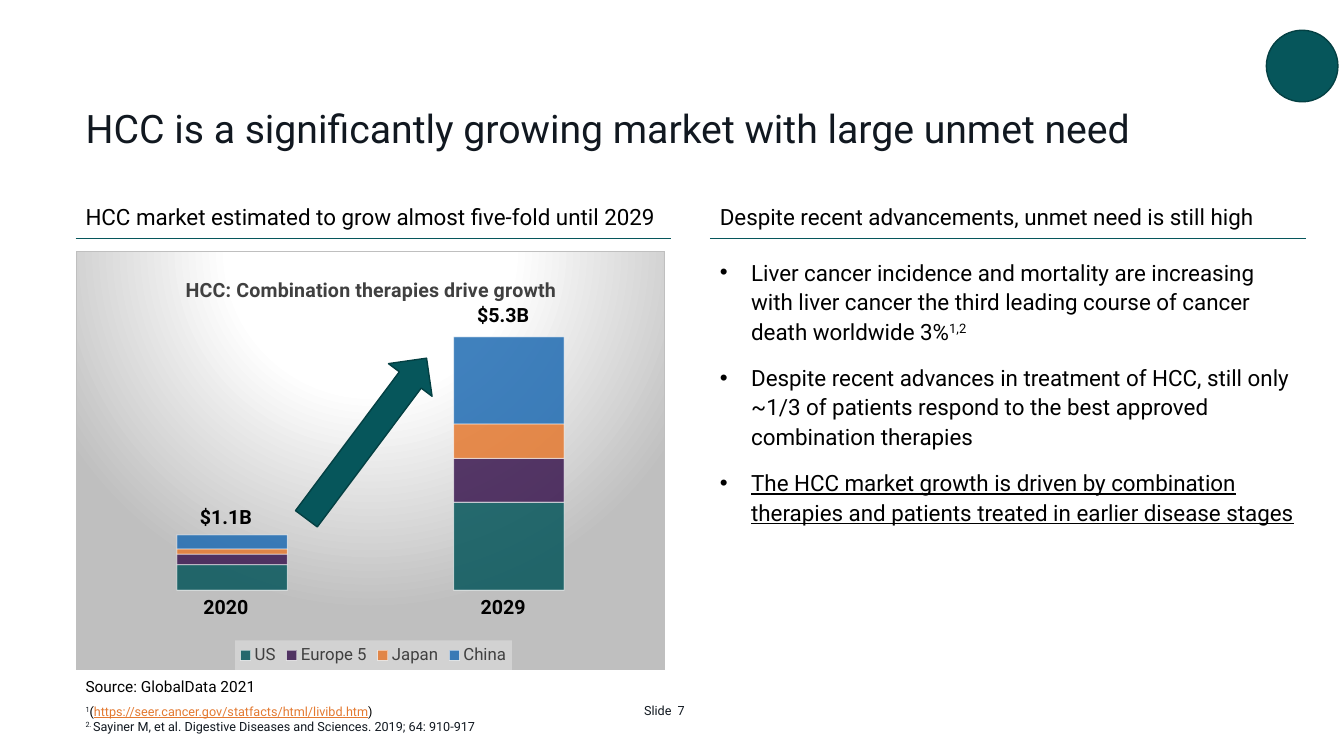
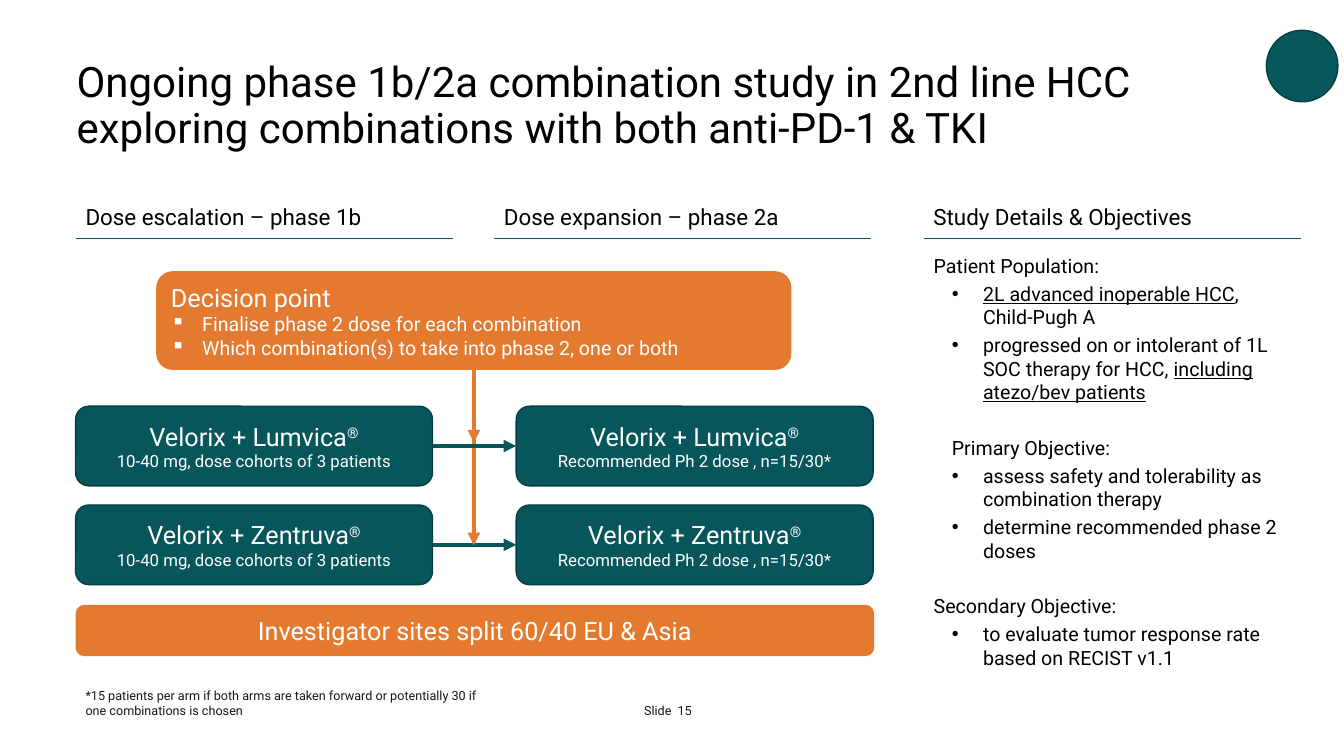
from dataclasses import dataclass
from typing import Optional

from lxml.etree import SubElement
from pptx import Presentation
from pptx.chart.data import CategoryChartData
from pptx.dml.color import RGBColor
from pptx.enum.chart import XL_CHART_TYPE, XL_LEGEND_POSITION
from pptx.enum.shapes import MSO_CONNECTOR, MSO_SHAPE
from pptx.enum.text import MSO_ANCHOR, MSO_AUTO_SIZE, PP_ALIGN
from pptx.oxml import parse_xml
from pptx.oxml.ns import nsdecls, qn
from pptx.util import Inches, Pt

FONT = "Roboto"
TEAL, TEAL_EDGE, ORANGE = "06565B", "044043", "E47930"
PURPLE, BLUE = "3B1850", "1F6BB2"
INK, BLACK, WHITE, GREY, SILVER = "111820", "000000", "FFFFFF", "404040", "BFBFBF"
SUPER = {"super": True}
UNDER = {"underline": True}
RULE_TOP = 2.36


@dataclass
class Para:
    runs: list
    bullet: Optional[str] = None
    margin: float = 0
    hanging: float = 0
    before: float = 0
    after: float = 0
    spacing: float = 1.0
    align: PP_ALIGN = PP_ALIGN.LEFT


def rgb(value):
    return RGBColor.from_string(value)


def style_font(font, size, color, bold=False):
    font.name, font.size, font.bold = FONT, Pt(size), bold
    font.color.rgb = rgb(color)


def add_run(paragraph, text, size, color, super=False, underline=False, bold=False):
    run = paragraph.add_run()
    run.text = text
    style_font(run.font, size, color, bold)
    if underline:
        run.font.underline = True
    if super:
        run._r.get_or_add_rPr().set("baseline", "30000")


def write(frame, paras, size, color, anchor=MSO_ANCHOR.TOP):
    frame.word_wrap = True
    frame.auto_size = MSO_AUTO_SIZE.NONE
    frame.vertical_anchor = anchor
    for index, para in enumerate(paras):
        paragraph = frame.paragraphs[0] if index == 0 else frame.add_paragraph()
        properties = paragraph._p.get_or_add_pPr()
        properties.set("marL", str(Inches(para.margin)))
        properties.set("indent", str(Inches(-para.hanging)))
        if para.bullet:
            SubElement(properties, qn("a:buChar")).set("char", para.bullet)
        else:
            SubElement(properties, qn("a:buNone"))
        paragraph.alignment = para.align
        paragraph.line_spacing = para.spacing
        paragraph.space_before = Pt(para.before)
        paragraph.space_after = Pt(para.after)
        for item in para.runs:
            text, options = (item, {}) if isinstance(item, str) else item
            add_run(paragraph, text, **{"size": size, "color": color, **options})


def place(shape, left, top, width, height):
    shape.left, shape.top = Inches(left), Inches(top)
    shape.width, shape.height = Inches(width), Inches(height)


def add_text(slide, box, paras, size, color=BLACK, anchor=MSO_ANCHOR.TOP):
    frame = slide.shapes.add_textbox(*map(Inches, box)).text_frame
    write(frame, paras, size, color, anchor)
    return frame


def add_block(slide, kind, box, fill, edge=None):
    block = slide.shapes.add_shape(kind, *map(Inches, box))
    block.shadow.inherit = False
    block.fill.solid()
    block.fill.fore_color.rgb = rgb(fill)
    if edge:
        block.line.color.rgb = rgb(edge)
        block.line.width = Pt(1)
    else:
        block.line.fill.background()
    return block


def add_line(slide, start, end, color, width, arrow=False):
    line = slide.shapes.add_connector(
        MSO_CONNECTOR.STRAIGHT, *map(Inches, (*start, *end)))
    line.line.color.rgb = rgb(color)
    line.line.width = Pt(width)
    if arrow:
        SubElement(line.line._get_or_add_ln(), qn("a:tailEnd")).set("type", "triangle")
    SubElement(line._element.spPr, qn("a:effectLst"))
    return line


def add_heading(slide, text, left, width):
    add_text(slide, (left, 1.97, width, 0.36), [Para([text])], 16,
             anchor=MSO_ANCHOR.MIDDLE)
    add_line(slide, (left, RULE_TOP), (left + width, RULE_TOP), TEAL, 0.5)


def add_footnote(slide, paras, width, height):
    add_text(slide, (0.75, 6.77, width, height), paras, 9, INK, MSO_ANCHOR.BOTTOM)


def start_slide(deck, title, number, title_left, size, color):
    slide = deck.slides.add_slide(deck.slide_layouts[1])
    place(slide.shapes.title, title_left, 0.55, 11.64, 1.01)
    write(slide.shapes.title.text_frame, [Para([title], spacing=0.9)], size, color,
          MSO_ANCHOR.BOTTOM)
    add_block(slide, MSO_SHAPE.OVAL, (12.56, 0.3, 0.71, 0.71), TEAL, TEAL_EDGE)
    word = add_text(slide, (5.67, 6.77, 1.01, 0.4),
                    [Para(["Slide"], align=PP_ALIGN.RIGHT)], 9, INK, MSO_ANCHOR.BOTTOM)
    word.margin_right = Inches(0.02)
    page = add_text(slide, (6.7, 6.77, 0.62, 0.4), [Para([number])], 9, INK,
                    MSO_ANCHOR.BOTTOM)
    page.margin_left = Inches(0.02)
    return slide


def fill_body(slide, box, paras, size):
    body = slide.placeholders[1]
    place(body, *box)
    write(body.text_frame, paras, size, BLACK)


def set_layout(part, inner=False, **fractions):
    for old in part.findall(qn("c:layout")):
        part.remove(old)
    target = '<c:layoutTarget val="inner"/>' if inner else ""
    modes = "".join(f'<c:{axis}Mode val="edge"/>' for axis in "xy")
    sizes = "".join(f'<c:{key} val="{value}"/>' for key, value in fractions.items())
    layout = parse_xml(f'<c:layout {nsdecls("c")}><c:manualLayout>{target}{modes}{sizes}'
                       '</c:manualLayout></c:layout>')
    overlay = part.find(qn("c:overlay"))
    if overlay is None:
        part.insert(0, layout)
    else:
        overlay.addprevious(layout)


def chart_properties(content):
    return parse_xml(f'<c:spPr {nsdecls("c", "a")}>{content}</c:spPr>')


def chart_background():
    stops = "".join(f'<a:gs pos="{position}000"><a:srgbClr val="{color}"/></a:gs>'
                    for position, color in ((0, WHITE), (39, WHITE), (100, SILVER)))
    return chart_properties(
        f'<a:gradFill><a:gsLst>{stops}</a:gsLst><a:path path="circle">'
        '<a:fillToRect l="50000" t="-80000" r="50000" b="180000"/></a:path></a:gradFill>'
        f'<a:ln w="9525"><a:solidFill><a:srgbClr val="{SILVER}"/></a:solidFill></a:ln>')


def style_series(series, color):
    series.format.fill.solid()
    series.format.fill.fore_color.rgb = rgb(color)
    series.format.line.color.rgb = rgb(WHITE)
    series.format.line.width = Pt(0.75)
    for element, alpha in zip(series._element.iter(qn("a:srgbClr")), (85, 50)):
        SubElement(element, qn("a:alpha")).set("val", str(alpha * 1000))


def add_market_chart(slide):
    regions = (("US", (29, 100), TEAL), ("Europe 5", (12, 50), PURPLE),
               ("Japan", (6, 39), ORANGE), ("China", (16, 99), BLUE))
    data = CategoryChartData(number_format="#,##0")
    data.categories = ["1", "2"]
    for region, values, _ in regions:
        data.add_series(region, values)
    chart = slide.shapes.add_chart(
        XL_CHART_TYPE.COLUMN_STACKED, *map(Inches, (0.75, 2.49, 5.85, 4.16)), data).chart
    style_font(chart.font, 10, BLACK)

    plot = chart.plots[0]
    plot.gap_width, plot.overlap, plot.vary_by_categories = 150, 100, False
    for series, (_, _, color) in zip(plot.series, regions):
        style_series(series, color)
    chart.category_axis.visible = False
    chart.value_axis.visible = False
    chart.value_axis.has_major_gridlines = False
    chart.value_axis.minimum_scale, chart.value_axis.maximum_scale = 0, 328

    chart.has_title = True
    add_run(chart.chart_title.text_frame.paragraphs[0],
            "HCC: Combination therapies drive growth", 14, GREY, bold=True)
    chart.has_legend = True
    legend = chart.legend
    legend.position = XL_LEGEND_POSITION.BOTTOM
    legend.include_in_layout = False
    style_font(legend.font, 12, GREY)
    legend._element.find(qn("c:overlay")).addnext(chart_properties(
        '<a:solidFill><a:srgbClr val="F2F2F2"><a:alpha val="39000"/></a:srgbClr>'
        '</a:solidFill>'))

    space = chart._chartSpace
    space.chart.addnext(chart_background())
    set_layout(space.chart.plotArea, inner=True, x=0.03, y=0.12, w=0.94, h=0.69)
    set_layout(chart.chart_title._element, x=0.18, y=0.05)
    set_layout(legend._element, x=0.27, y=0.93, w=0.47, h=0.07)


def build_market(deck):
    slide = start_slide(
        deck, "HCC is a significantly growing market with large unmet need",
        "7", 0.75, 28, INK)
    add_heading(slide, "HCC market estimated to grow almost five-fold until 2029", 0.75, 5.91)
    add_heading(slide, "Despite recent advancements, unmet need is still high", 7.04, 5.91)
    add_market_chart(slide)
    for left, year, amount, amount_top in ((1.84, "2020", "$1.1B", 4.96),
                                           (4.59, "2029", "$5.3B", 2.96)):
        for label, top in ((amount, amount_top), (year, 5.85)):
            add_text(slide, (left, top, 0.8, 0.35),
                     [Para([(label, {"bold": True})], align=PP_ALIGN.CENTER)], 14)
    growth = add_block(slide, MSO_SHAPE.RIGHT_ARROW, (2.64, 4.08, 1.99, 0.54),
                       TEAL, TEAL_EDGE)
    growth.rotation = 306.8

    needs = (
        ["Liver cancer incidence and mortality are increasing with liver cancer the third "
         "leading course of cancer death worldwide 3%", ("1,2", SUPER)],
        ["Despite recent advances in treatment of HCC, still only ~1/3 of patients respond "
         "to the best approved combination therapies"],
        [("The HCC market growth is driven by combination therapies and patients treated "
          "in earlier disease stages", UNDER)])
    fill_body(slide, (7.04, 2.49, 5.91, 2.79),
              [Para(runs, "•", 0.31, 0.31, before=12 if index else 0, spacing=1.1)
               for index, runs in enumerate(needs)], 16)
    add_text(slide, (0.75, 6.65, 2.77, 0.29),
             [Para(["Source: GlobalData 2021"], spacing=1.1)], 11)
    add_footnote(slide, [
        Para([("1", SUPER), ("(", {"color": BLACK}),
              ("https://seer.cancer.gov/statfacts/html/livibd.htm",
               {"color": ORANGE, "underline": True}), (")", {"color": BLACK})]),
        Para([("2. ", SUPER),
              "Sayiner M, et al. Digestive Diseases and Sciences. 2019; 64: 910-917"])],
        4.8, 0.56)


def add_arm(slide, left, top, partner, dosing):
    arm = add_block(slide, MSO_SHAPE.ROUNDED_RECTANGLE, (left, top, 3.54, 0.79),
                    TEAL, TEAL_EDGE)
    write(arm.text_frame, [
        Para([f"Velorix + {partner}", ("®", SUPER)], align=PP_ALIGN.CENTER),
        Para([(dosing, {"size": 12})], align=PP_ALIGN.CENTER)],
        18, WHITE, MSO_ANCHOR.MIDDLE)
    return arm


def link_arms(slide, escalation, expansion):
    link = add_line(slide, (4.29, 4.42), (5.12, 4.42), TEAL, 3, arrow=True)
    link.begin_connect(escalation, 3)
    link.end_connect(expansion, 1)


def study_item(*runs):
    return Para(list(runs), "•", 0.49, 0.31, after=3)


def build_study(deck):
    slide = start_slide(
        deck, "Ongoing phase 1b/2a combination study in 2nd line HCC exploring "
        "combinations with both anti-PD-1 & TKI", "15", 0.66, 30, BLACK)
    for left, heading in ((0.75, "Dose escalation – phase 1b"),
                          (4.9, "Dose expansion – phase 2a"),
                          (9.16, "Study Details & Objectives")):
        add_heading(slide, heading, left, 3.74)

    upper, lower = [
        (add_arm(slide, 0.75, top, partner, "10-40 mg, dose cohorts of 3 patients"),
         add_arm(slide, 5.12, top, partner, "Recommended Ph 2 dose , n=15/30*"))
        for top, partner in ((4.03, "Lumvica"), (5.01, "Zentruva"))]
    decision = add_block(slide, MSO_SHAPE.ROUNDED_RECTANGLE, (1.55, 2.69, 6.3, 0.98), ORANGE)
    write(decision.text_frame, [Para([("Decision point", {"size": 18})])] + [
        Para([choice], "▪", 0.31, 0.31)
        for choice in ("Finalise phase 2 dose for each combination",
                       "Which combination(s) to take into phase 2, one or both")],
        14, WHITE, MSO_ANCHOR.MIDDLE)
    link_arms(slide, *lower)
    for bottom in (4.39, 5.41):
        flow = add_line(slide, (4.7, 3.67), (4.7, bottom), ORANGE, 3, arrow=True)
        flow.begin_connect(decision, 2)
    link_arms(slide, *upper)
    sites = add_block(slide, MSO_SHAPE.ROUNDED_RECTANGLE, (0.75, 6, 7.92, 0.51), ORANGE)
    write(sites.text_frame, [Para(["Investigator sites split 60/40 EU & Asia"],
                                  align=PP_ALIGN.CENTER)], 18, WHITE, MSO_ANCHOR.MIDDLE)

    fill_body(slide, (9.16, 2.47, 3.74, 4.1), [
        Para(["Patient Population:"], after=3),
        study_item(("2L advanced inoperable HCC", UNDER), ", Child-Pugh A"),
        study_item("progressed on or intolerant of 1L SOC therapy for HCC, ",
                   ("including atezo/bev patients", UNDER)),
        Para(["Primary Objective:"], margin=0.18, before=20, after=3),
        study_item("assess safety and tolerability as combination therapy"),
        study_item("determine recommended phase 2 doses"),
        Para(["Secondary Objective:"], before=20, after=3),
        study_item("to evaluate tumor response rate based on RECIST v1.1")], 14)
    add_footnote(slide, [Para(["*15 patients per arm if both arms are taken forward or "
                               "potentially 30 if one combinations is chosen"])], 4.14, 0.4)


def main():
    deck = Presentation()
    deck.slide_width, deck.slide_height = Inches(13.33), Inches(7.5)
    build_market(deck)
    build_study(deck)
    deck.save("out.pptx")


if __name__ == "__main__":
    main()
